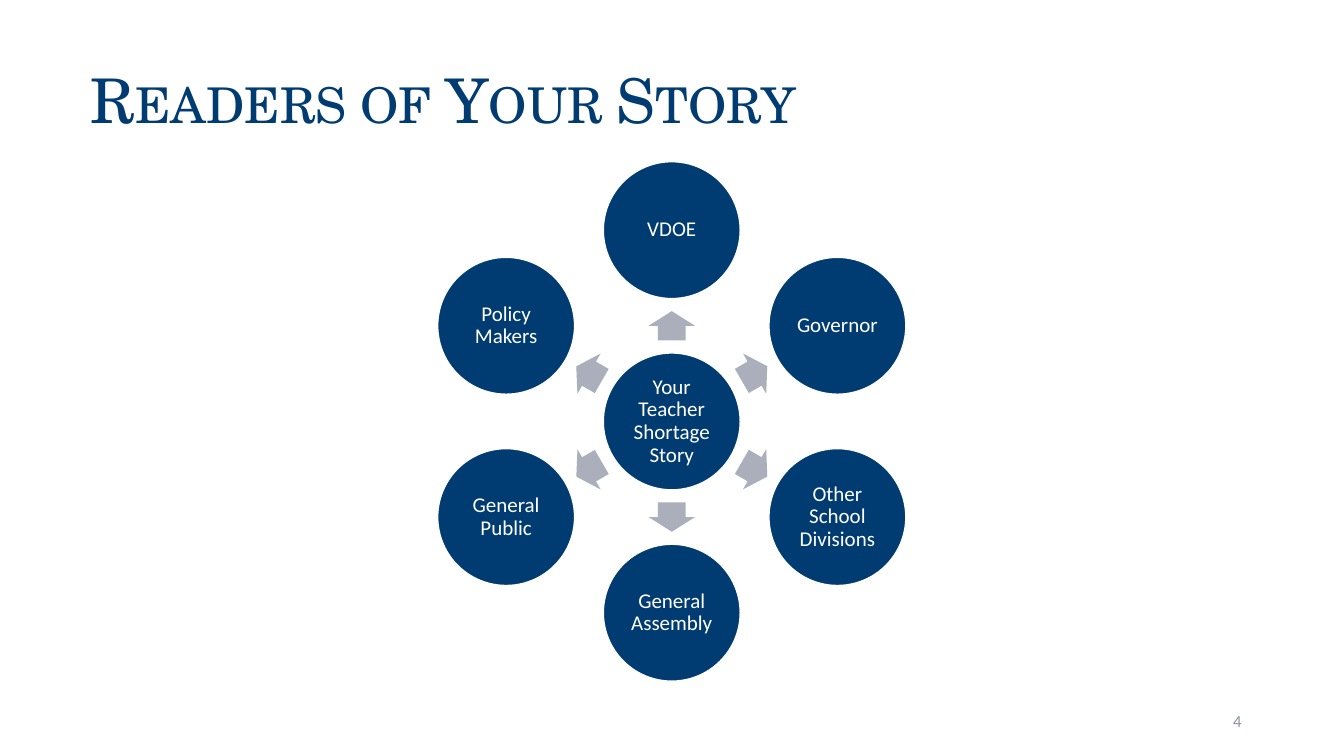
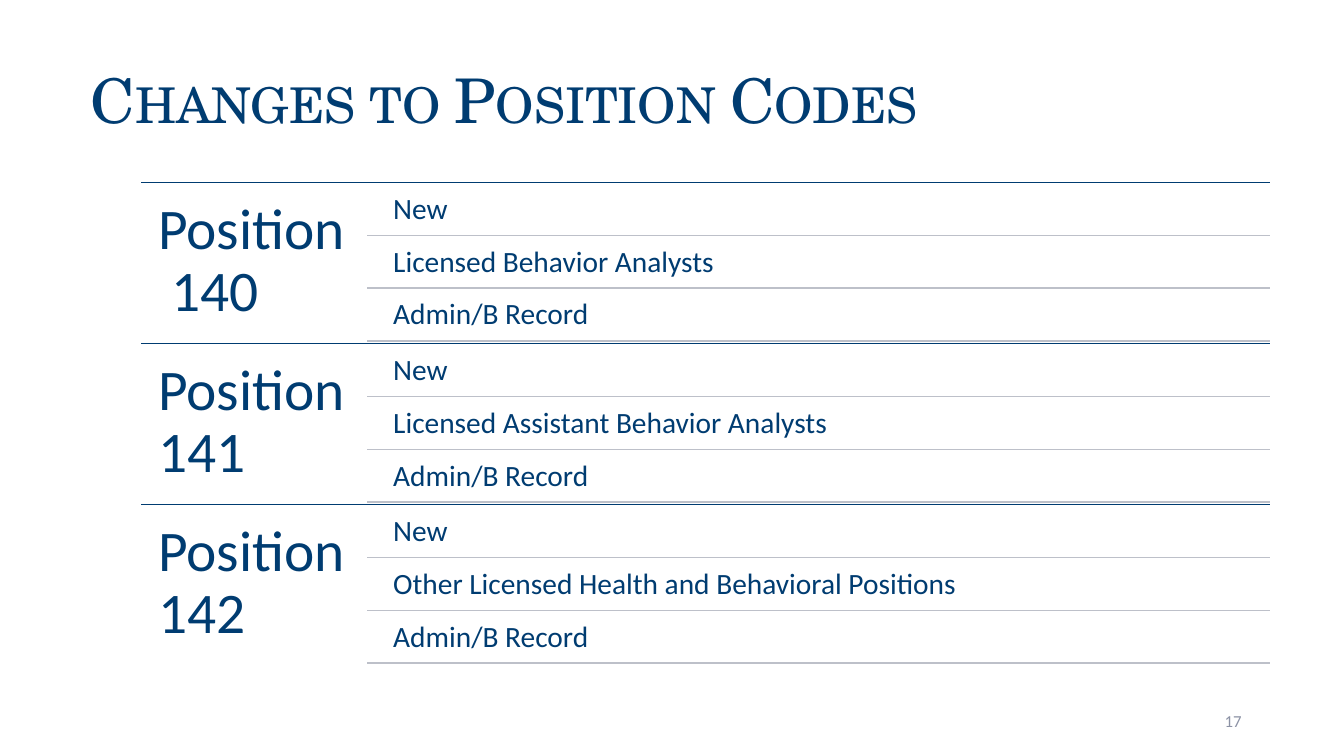
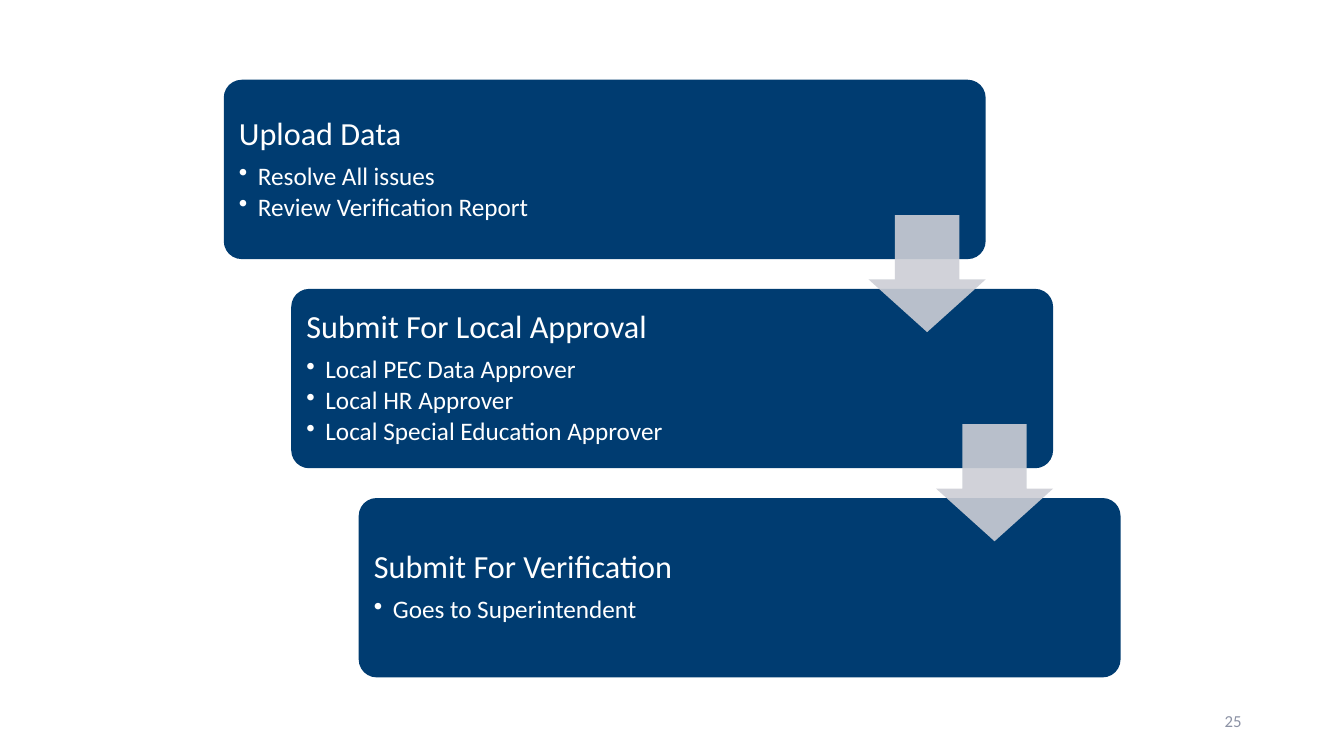
from math import cos, radians, sin

from lxml.etree import SubElement
from pptx import Presentation
from pptx.dml.color import RGBColor
from pptx.enum.shapes import MSO_CONNECTOR as Connector, MSO_SHAPE as Preset
from pptx.enum.text import MSO_ANCHOR as Anchor, MSO_AUTO_SIZE as AutoSize, PP_ALIGN as Align
from pptx.oxml.ns import qn
from pptx.util import Cm, Pt

NAVY, WHITE, ARROW_GREY = "003C71", "FFFFFF", "ABAFBB"
RULE_GREY, PALE_GREY, NUMBER_GREY = "BDC0C9", "CCCED5", "8C92A5"
BODY_FONT, TITLE_FONT = "Calibri", "TeX Gyre Schola"
WIDTH, HEIGHT = 33.87, 19.05
TITLE_ONLY, BLANK = 5, 6

READERS_TITLE = "Readers of Your Story"
STORY = "Your Teacher Shortage Story"
READERS = ["VDOE", "Governor", "Other School Divisions",
           "General Assembly", "General Public", "Policy Makers"]

CODES_TITLE = "Changes to Position Codes"
POSITIONS = [
    ("Position\v 140", ["New", "Licensed Behavior Analysts", "Admin/B Record"]),
    ("Position 141", ["New", "Licensed Assistant Behavior Analysts", "Admin/B Record"]),
    ("Position 142", ["New", "Other Licensed Health and Behavioral Positions", "Admin/B Record"]),
]

STEPS = [
    ("Upload Data", ["Resolve All issues", "Review Verification Report"]),
    ("Submit For Local Approval",
     ["Local PEC Data Approver", "Local HR Approver", "Local Special Education Approver"]),
    ("Submit For Verification", ["Goes to Superintendent"]),
]


def colour(code):
    return RGBColor.from_string(code)


def apply(target, values):
    for name, value in values.items():
        setattr(target, name, value)


def set_frame(frame, insets, anchor=Anchor.TOP):
    left, top, right, bottom = insets
    apply(frame, {
        "word_wrap": True, "auto_size": AutoSize.NONE, "vertical_anchor": anchor,
        "margin_left": Cm(left), "margin_top": Cm(top),
        "margin_right": Cm(right), "margin_bottom": Cm(bottom),
    })


def set_paragraph(paragraph, text, size, code, font=BODY_FONT, **layout):
    paragraph.text = text
    apply(paragraph, {"alignment": Align.LEFT, "line_spacing": 0.9, **layout})
    for run in paragraph.runs:
        apply(run.font, {"size": Pt(size), "name": font})
        run.font.color.rgb = colour(code)


def add_bullet(paragraph):
    properties = paragraph._p.get_or_add_pPr()
    properties.set("marL", str(Cm(0.48)))
    properties.set("indent", str(-Cm(0.48)))
    SubElement(properties, qn("a:buChar")).set("char", "•")


def add_text(slide, box, text, size, code, insets, anchor=Anchor.TOP, **layout):
    frame = slide.shapes.add_textbox(*map(Cm, box)).text_frame
    set_frame(frame, insets, anchor)
    set_paragraph(frame.paragraphs[0], text, size, code, **layout)


def add_preset(slide, preset, box, fill, adjustments=(), outline=None):
    shape = slide.shapes.add_shape(preset, *map(Cm, box))
    shape.shadow.inherit = False
    shape.fill.solid()
    shape.fill.fore_color.rgb = colour(fill)
    for index, value in enumerate(adjustments):
        shape.adjustments[index] = value
    if outline:
        shape.line.color.rgb = colour(outline)
        shape.line.width = Pt(1)
    else:
        shape.line.fill.background()
    return shape


def add_rule(slide, left, right, y, code):
    rule = slide.shapes.add_connector(Connector.STRAIGHT, Cm(left), Cm(y), Cm(right), Cm(y))
    rule.line.color.rgb = colour(code)
    rule.line.width = Pt(1)
    SubElement(rule._element.spPr, qn("a:effectLst"))


def start_slide(deck, number, title=None):
    slide = deck.slides.add_slide(deck.slide_layouts[TITLE_ONLY if title else BLANK])
    if title:
        heading = slide.shapes.title
        apply(heading, {"left": 0, "top": 0, "width": Cm(WIDTH), "height": Cm(3.68)})
        set_frame(heading.text_frame, (2.29, 1.78, 0.25, 0.13))
        paragraph = heading.text_frame.paragraphs[0]
        set_paragraph(paragraph, title, 44, NAVY, TITLE_FONT, space_before=Pt(10))
        paragraph.runs[0]._r.get_or_add_rPr().set("cap", "small")
    add_text(slide, (23.92, 17.66, 7.62, 1.01), str(number), 12, NUMBER_GREY,
             (0.25, 0.13, 0.25, 0.13), Anchor.MIDDLE, alignment=Align.RIGHT, line_spacing=1.0)
    return slide


def add_circle(slide, x, y, text):
    diameter = 3.45
    box = (x - diameter / 2, y - diameter / 2, diameter, diameter)
    frame = add_preset(slide, Preset.OVAL, box, NAVY, outline=WHITE).text_frame
    set_frame(frame, (0.05,) * 4, Anchor.MIDDLE)
    set_paragraph(frame.paragraphs[0], text, 15, WHITE,
                  alignment=Align.CENTER, space_after=Pt(5.25))


def build_readers(deck):
    slide = start_slide(deck, 4, READERS_TITLE)
    hub_x, hub_y, orbit, arrow_orbit = 16.93, 10.62, 4.82, 2.41
    arrow_width, arrow_height = 0.74, 1.17
    add_circle(slide, hub_x, hub_y, STORY)
    for index, reader in enumerate(READERS):
        angle = index * 360 / len(READERS) - 90
        across, down = cos(radians(angle)), sin(radians(angle))
        box = (hub_x + arrow_orbit * across - arrow_width / 2,
               hub_y + arrow_orbit * down - arrow_height / 2, arrow_width, arrow_height)
        arrow = add_preset(slide, Preset.RIGHT_ARROW, box, ARROW_GREY, (0.6, 0.5))
        arrow.rotation = angle % 360
        add_circle(slide, hub_x + orbit * across, hub_y + orbit * down, reader)


def build_codes(deck):
    slide = start_slide(deck, 17, CODES_TITLE)
    left, detail_left, right = 3.56, 9.25, 32.0
    first_top, band_height, row_pitch, row_height = 4.6, 4.06, 1.33, 1.27
    for band, (position, details) in enumerate(POSITIONS):
        top = first_top + band * band_height
        add_rule(slide, left, right, top, NAVY)
        add_text(slide, (left, top, detail_left - left, band_height), position, 41, NAVY,
                 (0.43,) * 4, space_after=Pt(14.35))
        for row, detail in enumerate(details):
            row_top = top + 0.06 + row * row_pitch
            add_text(slide, (detail_left + 0.43, row_top, right - detail_left - 0.43, row_height),
                     detail, 21, NAVY, (0.23,) * 4, space_after=Pt(7.35))
            add_rule(slide, detail_left, right, row_top + row_height, RULE_GREY)


def build_steps(deck):
    slide = start_slide(deck, 25)
    width, height, arrow_size = 19.2, 4.52, 2.95
    corners = [(5.64 + 1.7 * index, 2.01 + 5.27 * index) for index in range(len(STEPS))]
    for (left, top), (step, tasks) in zip(corners, STEPS):
        frame = add_preset(slide, Preset.ROUNDED_RECTANGLE, (left, top, width, height),
                           NAVY, (0.1,)).text_frame
        set_frame(frame, (0.25,) * 4, Anchor.MIDDLE)
        set_paragraph(frame.paragraphs[0], step, 23, WHITE, space_after=Pt(8.05))
        for task in tasks:
            paragraph = frame.add_paragraph()
            set_paragraph(paragraph, task, 18, WHITE, level=1, space_after=Pt(2.7))
            add_bullet(paragraph)
    for left, top in corners[:-1]:
        box = (left + width - arrow_size, top + 3.41, arrow_size, arrow_size)
        arrow = add_preset(slide, Preset.DOWN_ARROW, box, PALE_GREY, (0.55, 0.45))
        tint = arrow._element.spPr.find(qn("a:solidFill")).find(qn("a:srgbClr"))
        SubElement(tint, qn("a:alpha")).set("val", "90000")


def main():
    deck = Presentation()
    apply(deck, {"slide_width": Cm(WIDTH), "slide_height": Cm(HEIGHT)})
    for build in (build_readers, build_codes, build_steps):
        build(deck)
    deck.save("out.pptx")


if __name__ == "__main__":
    main()
